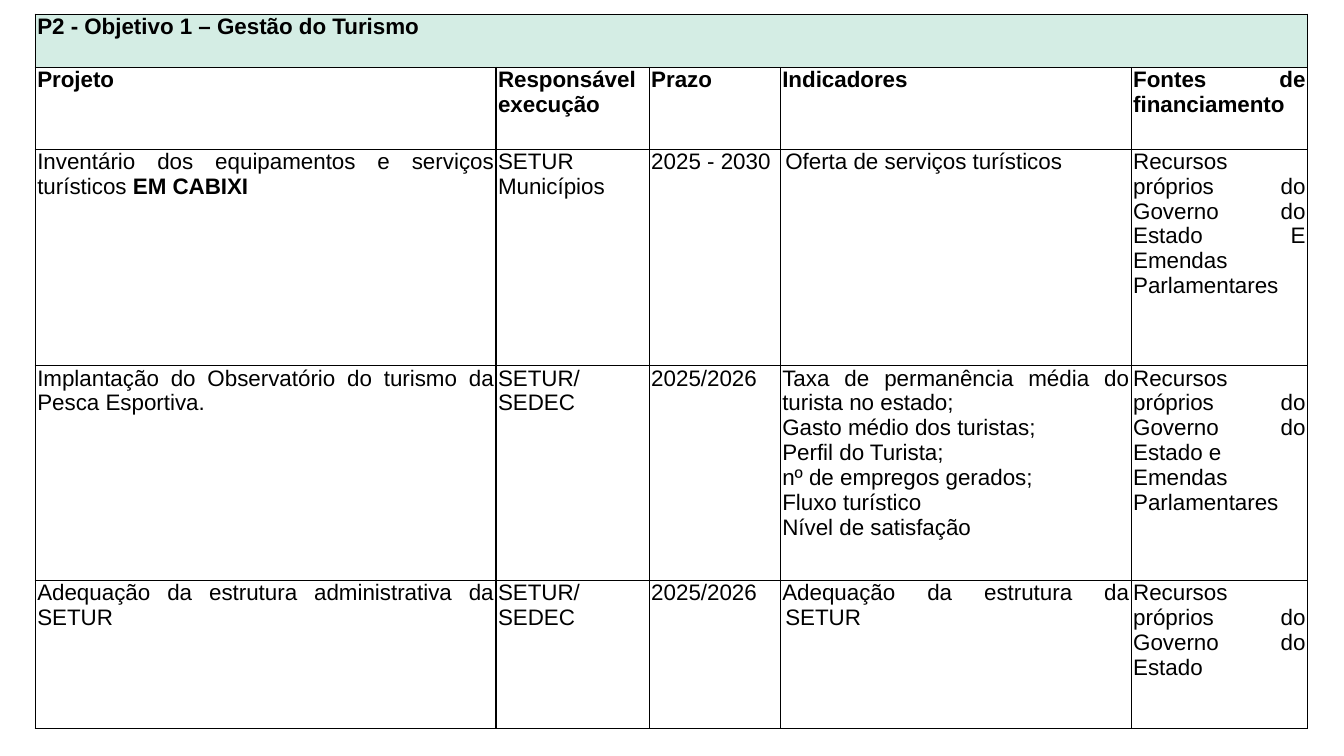
from lxml.etree import SubElement
from pptx import Presentation
from pptx.dml.color import RGBColor
from pptx.enum.text import PP_ALIGN
from pptx.oxml.ns import qn
from pptx.util import Inches, Pt

BLACK = RGBColor(0x00, 0x00, 0x00)
MINT = RGBColor(0xD4, 0xED, 0xE4)

WIDTHS = [4.57, 1.52, 1.3, 3.48, 1.75]
HEIGHTS = [0.53, 0.81, 2.15, 2.13, 1.47]

TITLE = "P2 - Objetivo 1 – Gestão do Turismo"
HEADS = ["Projeto", "Responsável execução", "Prazo", "Indicadores",
         "Fontes de financiamento"]
# Each line of a cell is one paragraph; text after "**" is bold.
PROJECTS = [
    ["Inventário dos equipamentos e serviços turísticos **EM CABIXI",
     "SETUR\nMunicípios", "2025 - 2030", "Oferta de serviços turísticos",
     "Recursos próprios do Governo do Estado E Emendas Parlamentares"],
    ["Implantação do Observatório do turismo da Pesca Esportiva.",
     "SETUR/\nSEDEC", "2025/2026",
     "Taxa de permanência média do turista no estado;\n"
     "Gasto médio dos turistas;\nPerfil do Turista;\n"
     "nº de empregos gerados;\nFluxo turístico\nNível de satisfação",
     "Recursos próprios do Governo do Estado e\nEmendas Parlamentares"],
    ["Adequação da estrutura administrativa da SETUR",
     "SETUR/\nSEDEC", "2025/2026", "Adequação da estrutura da SETUR",
     "Recursos próprios do Governo do Estado"],
]
# (row, column): left margin and first-line indent
INDENTS = {(2, 3): (0.03, 0), (4, 3): (0.03, -0.03)}


class Deck:
    font = {"name": "Arial", "size": Pt(16)}
    inset = {"margin_left": Inches(0.02), "margin_right": Inches(0.02),
             "margin_top": 0, "margin_bottom": 0}
    plain = {"first_row": False, "horz_banding": False}

    def __init__(self):
        self.prs = Presentation()
        self.prs.slide_width = Inches(13.33)
        self.prs.slide_height = Inches(7.5)
        self.slide = self.prs.slides.add_slide(self.prs.slide_layouts[6])

    def apply(self, item, style):
        for name, value in style.items():
            setattr(item, name, value)

    def grid(self, left, top, widths, heights):
        frame = self.slide.shapes.add_table(
            len(heights), len(widths), Inches(left), Inches(top),
            Inches(sum(widths)), Inches(sum(heights)))
        table = frame.table
        self.apply(table, self.plain)
        for col, width in zip(table.columns, widths):
            col.width = Inches(width)
        for row, height in zip(table.rows, heights):
            row.height = Inches(height)
        for cell in table.iter_cells():
            self.apply(cell, self.inset)
            self.border(cell)
            cell.fill.background()
        return table

    def border(self, cell):
        props = cell._tc.get_or_add_tcPr()
        for side in "LRTB":
            line = SubElement(props, qn(f"a:ln{side}"), w=str(Pt(1)))
            fill = SubElement(line, qn("a:solidFill"))
            SubElement(fill, qn("a:srgbClr"), val=str(BLACK))

    def label(self, cell, text, bold=False, indent=None):
        frame = cell.text_frame
        for i, line in enumerate(text.split("\n")):
            para = frame.add_paragraph() if i else frame.paragraphs[0]
            para.alignment = PP_ALIGN.JUSTIFY
            if indent:
                props = para._p.get_or_add_pPr()
                for name, size in zip(("marL", "indent"), indent):
                    props.set(name, str(Inches(size)))
            for j, part in enumerate(line.split("**")):
                run = para.add_run()
                run.text = part
                self.apply(run.font, {**self.font, "bold": bold or j > 0})
                run.font.color.rgb = BLACK


def main():
    deck = Deck()
    table = deck.grid(0.35, 0.14, WIDTHS, HEIGHTS)
    title = table.cell(0, 0)
    title.merge(table.cell(0, len(WIDTHS) - 1))
    title.fill.solid()
    title.fill.fore_color.rgb = MINT
    deck.label(title, TITLE, bold=True)
    for r, row in enumerate([HEADS, *PROJECTS], 1):
        for c, text in enumerate(row):
            deck.label(table.cell(r, c), text, r == 1, INDENTS.get((r, c)))
    deck.prs.save("out.pptx")


if __name__ == "__main__":
    main()
